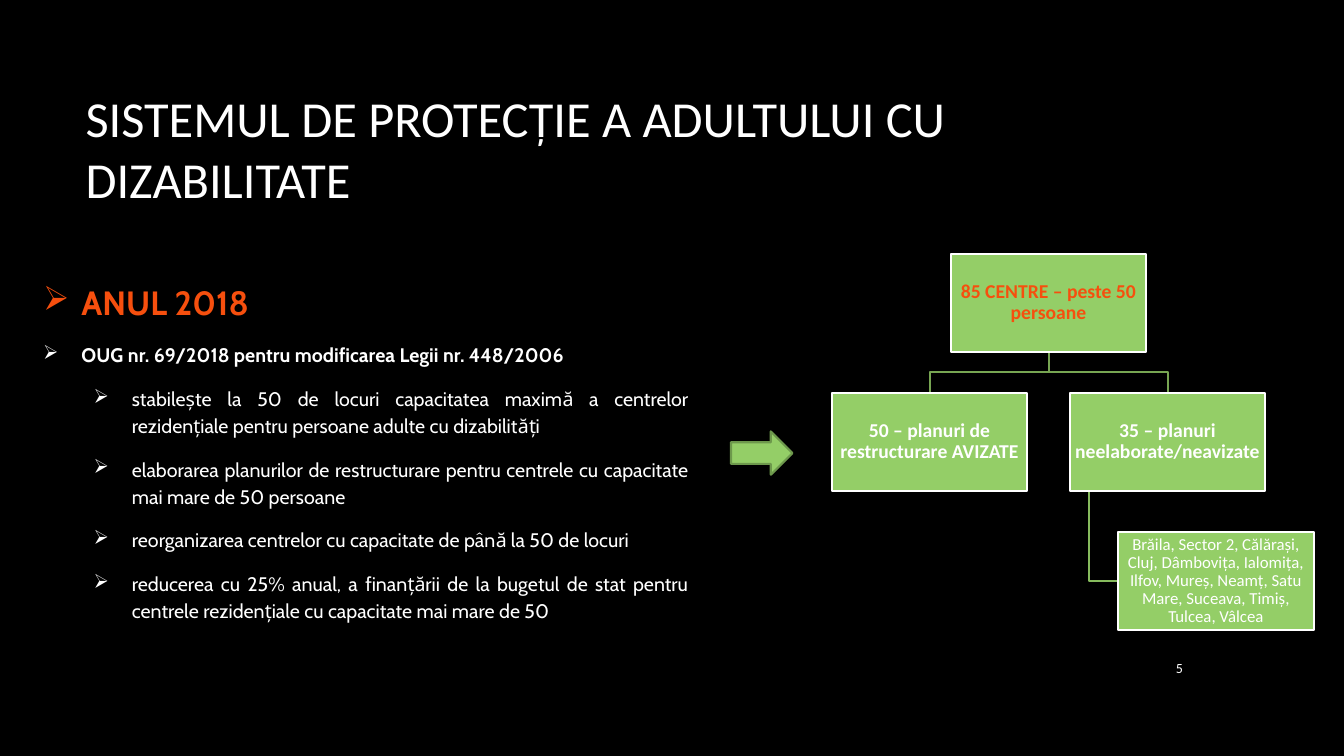
"""Build the slide on the protection system for adults with disabilities."""
from dataclasses import dataclass

from lxml.etree import SubElement
from pptx import Presentation
from pptx.dml.color import RGBColor
from pptx.enum.shapes import MSO_SHAPE as Preset
from pptx.enum.text import MSO_ANCHOR as Anchor, PP_ALIGN as Align
from pptx.oxml.ns import qn
from pptx.util import Inches, Pt

COLORS = {
    "background": "000000", "text": "FFFFFF", "accent": "F64F0E", "green": "94CE67",
    "arrow_edge": "6D984C", "branch": "77A552", "leaf_branch": "86BB5D",
}
NODE_WIDTH, NODE_HEIGHT = 1.94, 0.97
EDGE_WIDTH = 1.5


@dataclass(frozen=True)
class Style:
    size: float
    font: str = "Calibri"
    color: str = "text"
    bold: bool = False


@dataclass(frozen=True)
class Bullet:
    text: str
    style: Style
    indent: float = 0.38


@dataclass(frozen=True)
class Node:
    text: str
    left: float
    top: float
    style: Style

    @property
    def center(self) -> float:
        return self.left + NODE_WIDTH / 2

    @property
    def middle(self) -> float:
        return self.top + NODE_HEIGHT / 2

    @property
    def bottom(self) -> float:
        return self.top + NODE_HEIGHT


def rgb(name: str) -> RGBColor:
    return RGBColor.from_string(COLORS[name])


def write(paragraph, text: str, style: Style, align: Align) -> None:
    paragraph.text = text
    paragraph.alignment = align
    for run in paragraph.runs:
        run.font.size = Pt(style.size)
        run.font.name = style.font
        run.font.bold = style.bold
        run.font.color.rgb = rgb(style.color)


def add_text_frame(slide, left: float, top: float, width: float, height: float, anchor: Anchor):
    box = slide.shapes.add_textbox(Inches(left), Inches(top), Inches(width), Inches(height))
    box.text_frame.word_wrap = True
    box.text_frame.vertical_anchor = anchor
    return box.text_frame


def add_label(slide, text: str, left: float, top: float, width: float, height: float,
              style: Style, align: Align) -> None:
    frame = add_text_frame(slide, left, top, width, height, Anchor.MIDDLE)
    write(frame.paragraphs[0], text, style, align)


def add_bullets(slide, bullets: list[Bullet]) -> None:
    frame = add_text_frame(slide, 0.33, 2.69, 6.6, 3.56, Anchor.TOP)
    for index, bullet in enumerate(bullets):
        paragraph = frame.add_paragraph() if index else frame.paragraphs[0]
        write(paragraph, bullet.text, bullet.style, Align.JUSTIFY)
        paragraph.line_spacing = 1.15
        paragraph.space_before = Pt(6 if index else 0)
        paragraph.space_after = Pt(6)
        properties = paragraph._p.get_or_add_pPr()
        properties.set("marL", str(Inches(bullet.indent)))
        properties.set("indent", str(Inches(-0.38)))
        SubElement(properties, qn("a:buChar")).set("char", "➢")


def add_filled(slide, preset: Preset, left: float, top: float, width: float, height: float,
               edge: str):
    shape = slide.shapes.add_shape(
        preset, Inches(left), Inches(top), Inches(width), Inches(height))
    shape.shadow.inherit = False
    shape.fill.solid()
    shape.fill.fore_color.rgb = rgb("green")
    shape.line.color.rgb = rgb(edge)
    shape.line.width = Pt(EDGE_WIDTH)
    return shape


def add_node(slide, node: Node) -> None:
    shape = add_filled(
        slide, Preset.RECTANGLE, node.left, node.top, NODE_WIDTH, NODE_HEIGHT, "text")
    frame = shape.text_frame
    frame.word_wrap = True
    frame.vertical_anchor = Anchor.MIDDLE
    frame.margin_left = frame.margin_right = Inches(0.01)
    frame.margin_top = frame.margin_bottom = Inches(0.01)
    write(frame.paragraphs[0], node.text, node.style, Align.CENTER)
    frame.paragraphs[0].line_spacing = 0.9


def add_branch(slide, points: list[tuple[float, float]], color: str) -> None:
    start, *rest = [(Inches(x), Inches(y)) for x, y in points]
    builder = slide.shapes.build_freeform(*start)
    builder.add_line_segments(rest, close=False)
    branch = builder.convert_to_shape()
    branch.shadow.inherit = False
    branch.fill.background()
    branch.line.color.rgb = rgb(color)
    branch.line.width = Pt(EDGE_WIDTH)


def add_tree(slide, root: Node, children: list[Node], leaf: Node) -> None:
    parent = children[-1]
    trunk = parent.left + NODE_WIDTH / 10
    add_branch(slide, [(trunk, parent.bottom), (trunk, leaf.middle), (leaf.left, leaf.middle)],
               "leaf_branch")
    for child in children:
        fork = (root.bottom + child.top) / 2
        add_branch(slide, [(root.center, root.bottom), (root.center, fork),
                           (child.center, fork), (child.center, child.top)], "branch")
    for node in (root, *children, leaf):
        add_node(slide, node)


def main() -> None:
    deck = Presentation()
    deck.slide_width, deck.slide_height = Inches(13.33), Inches(7.5)
    slide = deck.slides.add_slide(deck.slide_layouts[6])
    slide.background.fill.solid()
    slide.background.fill.fore_color.rgb = rgb("background")

    add_label(slide, "SISTEMUL DE PROTECȚIE A ADULTULUI CU DIZABILITATE",
              0.75, 0.67, 11.08, 1.59, Style(36), Align.LEFT)
    add_label(slide, "5", 11.23, 6.42, 0.6, 0.41, Style(10), Align.RIGHT)

    measures = [
        "stabilește la 50 de locuri capacitatea maximă a centrelor rezidențiale "
        "pentru persoane adulte cu dizabilități",
        "elaborarea planurilor de restructurare pentru centrele cu capacitate "
        "mai mare de 50 persoane",
        "reorganizarea centrelor cu capacitate de până la 50 de locuri",
        "reducerea cu 25% anual, a finanțării de la bugetul de stat pentru "
        "centrele rezidențiale cu capacitate mai mare de 50",
    ]
    add_bullets(slide, [
        Bullet("ANUL 2018", Style(24, "Cabin", "accent", True)),
        Bullet("OUG nr. 69/2018 pentru modificarea Legii nr. 448/2006",
               Style(14, "Cabin", bold=True)),
        *(Bullet(measure, Style(14, "Cabin"), 0.88) for measure in measures),
    ])

    add_filled(slide, Preset.RIGHT_ARROW, 7.25, 4.28, 0.61, 0.43, "arrow_edge")
    plan_style = Style(14, bold=True)
    add_tree(
        slide,
        Node("85 CENTRE – peste 50 persoane", 9.43, 2.52, Style(14, color="accent", bold=True)),
        [Node("50 – planuri de restructurare AVIZATE", 8.25, 3.9, plan_style),
         Node("35 – planuri neelaborate/neavizate", 10.61, 3.9, plan_style)],
        Node("Brăila, Sector 2, Călărași, Cluj, Dâmbovița, Ialomița, Ilfov, Mureș, Neamț, "
             "Satu Mare, Suceava, Timiș, Tulcea, Vâlcea", 11.09, 5.28, Style(12)),
    )
    deck.save("out.pptx")


if __name__ == "__main__":
    main()
